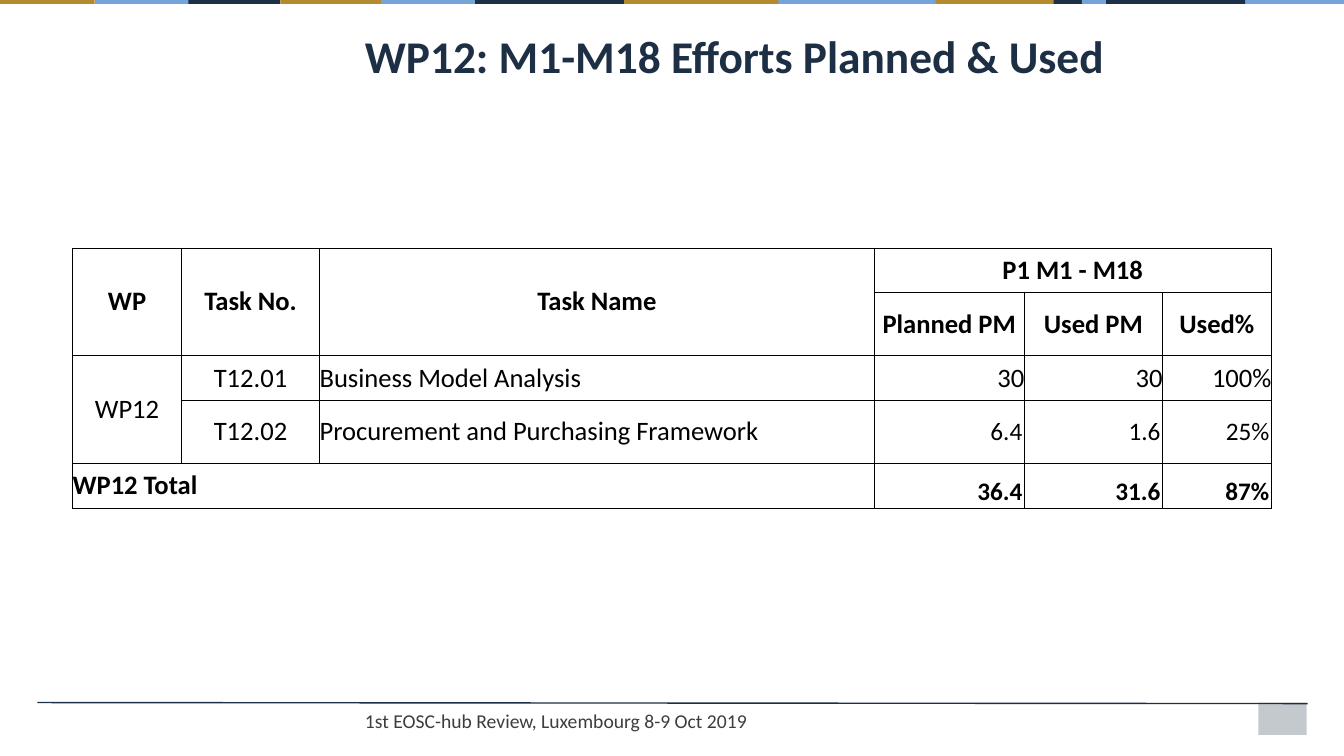
import pptx
import pptx.util
import pptx.dml.color
import pptx.enum.shapes
import pptx.enum.text
import pptx.oxml
import pptx.oxml.ns
from pptx.util import Inches

COLORS = {"navy": "1D2F45", "stripe": "1C3046", "gold": "B5892D", "sky": "75A5D8",
          "gray": "3D3D3D", "black": "000000", "white": "FFFFFF"}
ALIGN = {"l": pptx.enum.text.PP_ALIGN.LEFT, "c": pptx.enum.text.PP_ALIGN.CENTER,
         "r": pptx.enum.text.PP_ALIGN.RIGHT, "j": pptx.enum.text.PP_ALIGN.JUSTIFY}
ANCHOR = pptx.enum.text.MSO_ANCHOR


def color(name):
    return pptx.dml.color.RGBColor.from_string(COLORS[name])


def element(xml):
    return pptx.oxml.parse_xml(xml.replace(">", f" {pptx.oxml.ns.nsdecls('a')}>", 1))


class Page:
    font = "Calibri"

    def __init__(self, deck):
        self.slide = deck.slides.add_slide(deck.slide_layouts[6])

    def span(self, para, text, size, tint, bold=False):
        span = para.add_run()
        span.text = text
        span.font.name = self.font
        span.font.size = pptx.util.Pt(size)
        span.font.bold = bold
        span.font.color.rgb = color(tint)

    def bar(self, left, top, width, height, tint, alpha=None):
        bar = self.slide.shapes.add_shape(
            pptx.enum.shapes.MSO_SHAPE.RECTANGLE,
            Inches(left), Inches(top), Inches(width), Inches(height))
        bar.shadow.inherit = False
        bar.line.fill.background()
        bar.fill.solid()
        bar.fill.fore_color.rgb = color(tint)
        if alpha:
            fill = bar.fill._xPr.find(".//" + pptx.oxml.ns.qn("a:srgbClr"))
            fill.append(element(f'<a:alpha val="{alpha * 1000}"></a:alpha>'))

    def rule(self, x1, y1, x2, y2):
        rule = self.slide.shapes.add_connector(
            pptx.enum.shapes.MSO_CONNECTOR.STRAIGHT,
            Inches(x1), Inches(y1), Inches(x2), Inches(y2))
        rule.line.color.rgb = color("navy")
        rule.line.width = pptx.util.Pt(1)
        rule._element.spPr.append(element("<a:effectLst></a:effectLst>"))

    def text(self, left, top, width, height, text, size, tint, bold=False, inset=0.05):
        box = self.slide.shapes.add_textbox(
            Inches(left), Inches(top), Inches(width), Inches(height))
        box.text_frame.word_wrap = True
        box.text_frame.margin_top = Inches(inset)
        self.span(box.text_frame.paragraphs[0], text, size, tint, bold)

    def table(self, left, top, widths, heights):
        table = self.slide.shapes.add_table(
            len(heights), len(widths), Inches(left), Inches(top),
            Inches(sum(widths)), Inches(sum(heights))).table
        for column, width in zip(table.columns, widths):
            column.width = Inches(width)
        for row, height in zip(table.rows, heights):
            row.height = Inches(height)
        for cell in table.iter_cells():
            cell.margin_left = cell.margin_right = 0
            cell.margin_top = cell.margin_bottom = 0
            properties = cell._tc.get_or_add_tcPr()
            for side in "LRTB":
                properties.append(element(
                    f'<a:ln{side} w="6350"><a:solidFill><a:srgbClr val="{COLORS["black"]}"/>'
                    f'</a:solidFill></a:ln{side}>'))
            cell.fill.solid()
            cell.fill.fore_color.rgb = color("white")
        return table

    def cell(self, table, row, column, text, align="c", bold=False, rows=1, columns=1,
             padded=False, anchor=ANCHOR.MIDDLE):
        cell = table.cell(row, column)
        if rows * columns > 1:
            cell.merge(table.cell(row + rows - 1, column + columns - 1))
        cell.vertical_anchor = anchor
        if padded:
            cell.margin_left = cell.margin_right = Inches(0.02)
            cell.margin_top = cell.margin_bottom = Inches(0.01)
        para = cell.text_frame.paragraphs[0]
        para.alignment = ALIGN[align]
        self.span(para, text, 18 if padded else 19, "black", bold)


def main():
    deck = pptx.Presentation()
    deck.slide_width, deck.slide_height = Inches(13.33), Inches(7.5)
    page = Page(deck)

    # Footer block and rule
    page.bar(12.48, 6.97, 0.48, 0.32, "navy", alpha=26)
    page.rule(12.97, 6.98, 0.37, 6.97)

    # Top stripe, overlapping from back to front
    for left, width, tint in [
            (4.54, 1.65, "stripe"), (8.66, 4.62, "gold"), (12.25, 1.09, "sky"),
            (2.78, 1.48, "gold"), (10.45, 1.9, "stripe"), (7.61, 1.67, "sky"),
            (1.86, 0.92, "stripe"), (0.94, 0.93, "sky"), (3.78, 0.93, "sky"),
            (6.19, 1.53, "gold"), (10.73, 0.24, "sky"), (0, 0.94, "gold")]:
        page.bar(left, 0, width, 0.04, tint)

    # Efforts table: header
    efforts = page.table(0.72, 2.46, [1.08, 1.37, 5.5, 1.49, 1.37, 1.08],
                         [0.44, 0.63, 0.44, 0.63, 0.44])
    for column, label in enumerate(["WP", "Task No.", "Task Name"]):
        page.cell(efforts, 0, column, label, bold=True, rows=2)
    page.cell(efforts, 0, 3, "P1 M1 - M18", bold=True, columns=3)
    for column, label in enumerate(["Planned PM", "Used PM", "Used%"], 3):
        page.cell(efforts, 1, column, label, bold=True)

    # Efforts table: tasks and total
    page.cell(efforts, 2, 0, "WP12", rows=2)
    for row, number, name in [(2, "T12.01", "Business Model Analysis"),
                              (3, "T12.02", "Procurement and Purchasing Framework")]:
        page.cell(efforts, row, 1, number)
        page.cell(efforts, row, 2, name, "l")
    page.cell(efforts, 4, 0, "WP12 Total", "j", bold=True, columns=3)
    for row, figures in enumerate([("30", "30", "100%"), ("6.4", "1.6", "25%"),
                                   ("36.4", "31.6", "87%")], 2):
        total = row == 4
        for column, figure in enumerate(figures, 3):
            page.cell(efforts, row, column, figure, "r", bold=total, padded=row > 2,
                      anchor=ANCHOR.BOTTOM if total else ANCHOR.MIDDLE)

    # Title and footer text
    page.text(3.52, 0.21, 9.45, 0.59, "WP12: M1-M18 Efforts Planned & Used",
              32.4, "navy", bold=True, inset=0.07)
    page.text(3.52, 6.98, 5.98, 0.31, "1st EOSC-hub Review, Luxembourg 8-9 Oct 2019",
              14, "gray")

    deck.save("out.pptx")


if __name__ == "__main__":
    main()
